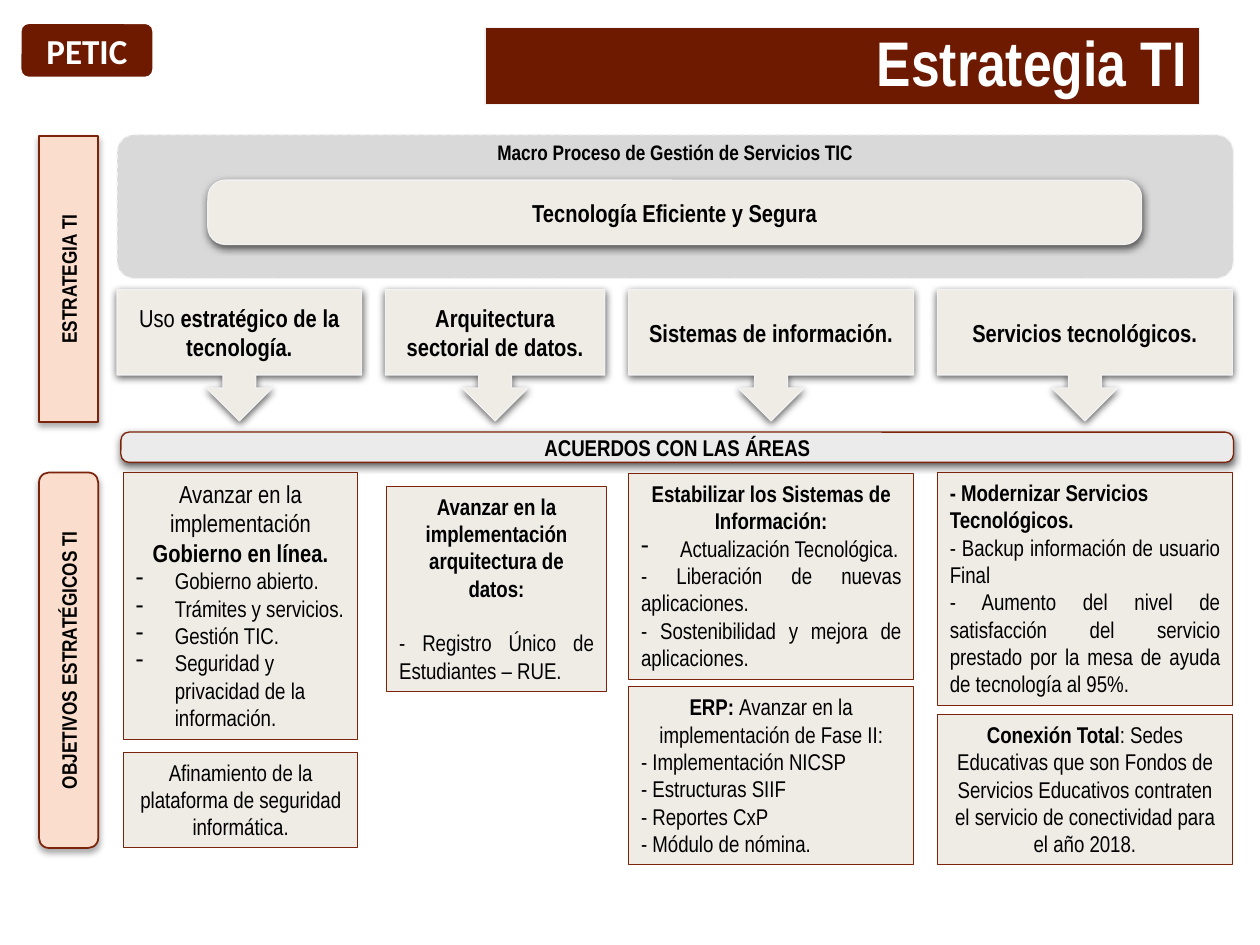
from lxml.etree import SubElement
from pptx import Presentation
from pptx.dml.color import RGBColor
from pptx.enum.dml import MSO_LINE
from pptx.enum.shapes import MSO_SHAPE as Preset
from pptx.enum.text import MSO_ANCHOR as Anchor, MSO_AUTO_SIZE as AutoSize, PP_ALIGN as Align
from pptx.oxml.ns import qn
from pptx.util import Inches, Pt

THEME = {
    "font": "Arial Narrow", "tag_font": "Calibri",
    "brown": "6E1A00", "edge": "7C240B", "cream": "EFEBE5", "peach": "FADDCD",
    "grey": "D9D9D9", "silver": "EBEBEB", "pale": "F2F2F2", "white": "FFFFFF", "black": "000000",
    "title": 36, "tag": 20, "heading": 14, "body": 13, "label": 12,
}
# Shadows: opacity in percent, then blur and distance in points
STRONG, SOFT = (63, 4.5, 1.5), (32, 3.5, 2.2)
BODY, HEADING = THEME["body"], THEME["heading"]


def plain(text):
    return (text, False)


def bold(text):
    return (text, True)


def para(align, *runs, size=BODY, bullet=False, before=0):
    return {"align": align, "runs": runs, "size": size, "bullet": bullet, "before": before}


def center(*runs, size=BODY):
    return para(Align.CENTER, *runs, size=size)


def left(text, **options):
    return para(Align.LEFT, plain(text), **options)


def justified(text, **options):
    return para(Align.JUSTIFY, plain(text), **options)


TITLE = "Estrategia TI"
TAG = "PETIC"
PROCESS = "Macro Proceso de Gestión de Servicios TIC"
GOAL = "Tecnología Eficiente y Segura"
AGREEMENTS = "ACUERDOS CON LAS ÁREAS"

# Side labels: text, top, height, corner
SIDE_LABELS = [
    ("ESTRATEGIA TI", 1.08, 2.27, 0),
    ("OBJETIVOS ESTRATÉGICOS TI", 3.75, 2.98, 0.167),
]

# Each column: callout left and width, callout runs, objective left and width,
# objectives as (top, height, paragraphs)
COLUMNS = [
    (0.93, 1.94, [plain("Uso "), bold("estratégico de la tecnología.")], 0.98, 1.86, [
        (3.75, 2.12, [
            center(plain("Avanzar en la implementación "), bold("Gobierno en línea."), size=HEADING),
            left("Gobierno abierto.", bullet=True),
            left("Trámites y servicios.", bullet=True),
            left("Gestión TIC.", bullet=True),
            left("Seguridad y privacidad de la información.", bullet=True),
        ]),
        (5.97, 0.76, [center(plain("Afinamiento de la plataforma de seguridad informática."))]),
    ]),
    (3.06, 1.74, [bold("Arquitectura sectorial de datos.")], 3.07, 1.74, [
        (3.86, 1.63, [
            center(bold("Avanzar en la implementación")),
            center(bold("arquitectura de datos:")),
            justified("- Registro Único de Estudiantes – RUE.", before=15.6),
        ]),
    ]),
    (4.99, 2.26, [bold("Sistemas de información.")], 4.99, 2.26, [
        (3.76, 1.63, [
            center(bold("Estabilizar los Sistemas de Información:")),
            justified("Actualización Tecnológica.", bullet=True),
            justified("- Liberación de nuevas aplicaciones."),
            justified("- Sostenibilidad y mejora de aplicaciones."),
        ]),
        (5.45, 1.41, [
            center(bold("ERP: "), plain("Avanzar en la implementación de Fase II:")),
            left("- Implementación NICSP"),
            left("- Estructuras SIIF"),
            left("- Reportes CxP"),
            left("- Módulo de nómina."),
        ]),
    ]),
    (7.44, 2.34, [bold("Servicios tecnológicos.")], 7.44, 2.34, [
        (3.75, 1.85, [
            para(Align.LEFT, bold("- Modernizar Servicios Tecnológicos.")),
            justified("- Backup información de usuario Final"),
            justified("- Aumento del nivel de satisfacción del servicio prestado "
                      "por la mesa de ayuda de tecnología al 95%."),
        ]),
        (5.67, 1.19, [
            center(bold("Conexión Total"),
                   plain(": Sedes Educativas que son Fondos de Servicios Educativos contraten "
                         "el servicio de conectividad para el año 2018.")),
        ]),
    ]),
]


def color(name):
    return RGBColor.from_string(THEME[name])


def place(shape, box):
    shape.left, shape.top, shape.width, shape.height = map(Inches, box)


def paint(shape, fill, line, width):
    shape.fill.solid()
    shape.fill.fore_color.rgb = color(fill)
    shape.line.color.rgb = color(line)
    shape.line.width = Pt(width)


def add_shadow(shape, opacity, blur, distance):
    """Fill the empty effect list with a shadow that falls straight down."""
    effects = shape._element.spPr.find(qn("a:effectLst"))
    shadow = SubElement(effects, qn("a:outerShdw"), blurRad=str(Pt(blur)), dist=str(Pt(distance)),
                        dir="5400000", algn="t", rotWithShape="0")
    tint = SubElement(shadow, qn("a:srgbClr"), val=THEME["black"])
    SubElement(tint, qn("a:alpha"), val=str(opacity * 1000))


def write(frame, paragraphs, font=THEME["font"], ink="black"):
    frame.word_wrap = True
    for index, item in enumerate(paragraphs):
        paragraph = frame.paragraphs[0] if index == 0 else frame.add_paragraph()
        paragraph.alignment = item["align"]
        if item["before"]:
            paragraph.space_before = Pt(item["before"])
        if item["bullet"]:
            properties = paragraph._p.get_or_add_pPr()
            properties.set("marL", str(Inches(0.31)))
            properties.set("indent", str(-Inches(0.31)))
            SubElement(properties, qn("a:buChar"), char="-")
        for text, is_bold in item["runs"]:
            run = paragraph.add_run()
            run.text = text
            run.font.name = font
            run.font.size = Pt(item["size"])
            run.font.bold = is_bold
            run.font.color.rgb = color(ink)


def add_block(slide, preset, box, paragraphs, fill="cream", line="pale", width=0.75,
              corner=None, shadow=None, anchor=Anchor.MIDDLE, **text_style):
    shape = slide.shapes.add_shape(preset, *map(Inches, box))
    shape.shadow.inherit = False
    paint(shape, fill, line, width)
    if corner is not None:
        shape.adjustments[0] = corner
    if shadow:
        add_shadow(shape, *shadow)
    shape.text_frame.vertical_anchor = anchor
    write(shape.text_frame, paragraphs, **text_style)
    return shape


def add_title(slide):
    title = slide.shapes.title
    place(title, (3.85, 0.22, 5.67, 0.61))
    paint(title, "brown", "pale", 0.75)
    frame = title.text_frame
    frame.auto_size = AutoSize.NONE
    frame.vertical_anchor = Anchor.MIDDLE
    write(frame, [para(Align.RIGHT, bold(TITLE), size=THEME["title"])], ink="white")
    frame.paragraphs[0].line_spacing = 0.9


def add_bands(slide):
    rounded = Preset.ROUNDED_RECTANGLE
    add_block(slide, rounded, (0.15, 0.17, 1.08, 0.46), [center(bold(TAG), size=THEME["tag"])],
              "brown", "white", 3, font=THEME["tag_font"], ink="white")
    add_block(slide, rounded, (0.96, 3.43, 8.83, 0.24), [center(bold(AGREEMENTS))],
              "silver", "edge", corner=0.27, shadow=STRONG)
    process = add_block(slide, rounded, (0.93, 1.07, 8.86, 1.14),
                        [center(bold(PROCESS), size=THEME["label"])],
                        "grey", corner=0.12, anchor=Anchor.TOP)
    process.line.dash_style = MSO_LINE.DASH
    process.text_frame.margin_top = 0
    add_block(slide, rounded, (1.65, 1.43, 7.41, 0.51), [center(bold(GOAL), size=HEADING)],
              corner=0.27, shadow=STRONG)
    for text, top, height, corner in SIDE_LABELS:
        label = add_block(slide, rounded, (0.31, top, 0.47, height),
                          [center(bold(text), size=THEME["label"])],
                          "peach", "edge", 1, corner=corner, shadow=SOFT)
        label.text_frame._txBody.bodyPr.set("vert", "vert270")


def add_columns(slide):
    for callout_left, callout_width, heading, box_left, box_width, objectives in COLUMNS:
        add_block(slide, Preset.DOWN_ARROW_CALLOUT, (callout_left, 2.3, callout_width, 1.04),
                  [center(*heading, size=HEADING)], shadow=STRONG)
        for top, height, paragraphs in objectives:
            objective = add_block(slide, Preset.RECTANGLE, (box_left, top, box_width, height),
                                  paragraphs, line="edge", width=0.5, anchor=Anchor.TOP)
            objective.text_frame.auto_size = AutoSize.SHAPE_TO_FIT_TEXT


def main():
    presentation = Presentation()
    presentation.slide_width, presentation.slide_height = Inches(10), Inches(7.5)
    slide = presentation.slides.add_slide(presentation.slide_layouts[5])
    add_title(slide)
    add_bands(slide)
    add_columns(slide)
    presentation.save("out.pptx")


if __name__ == "__main__":
    main()
